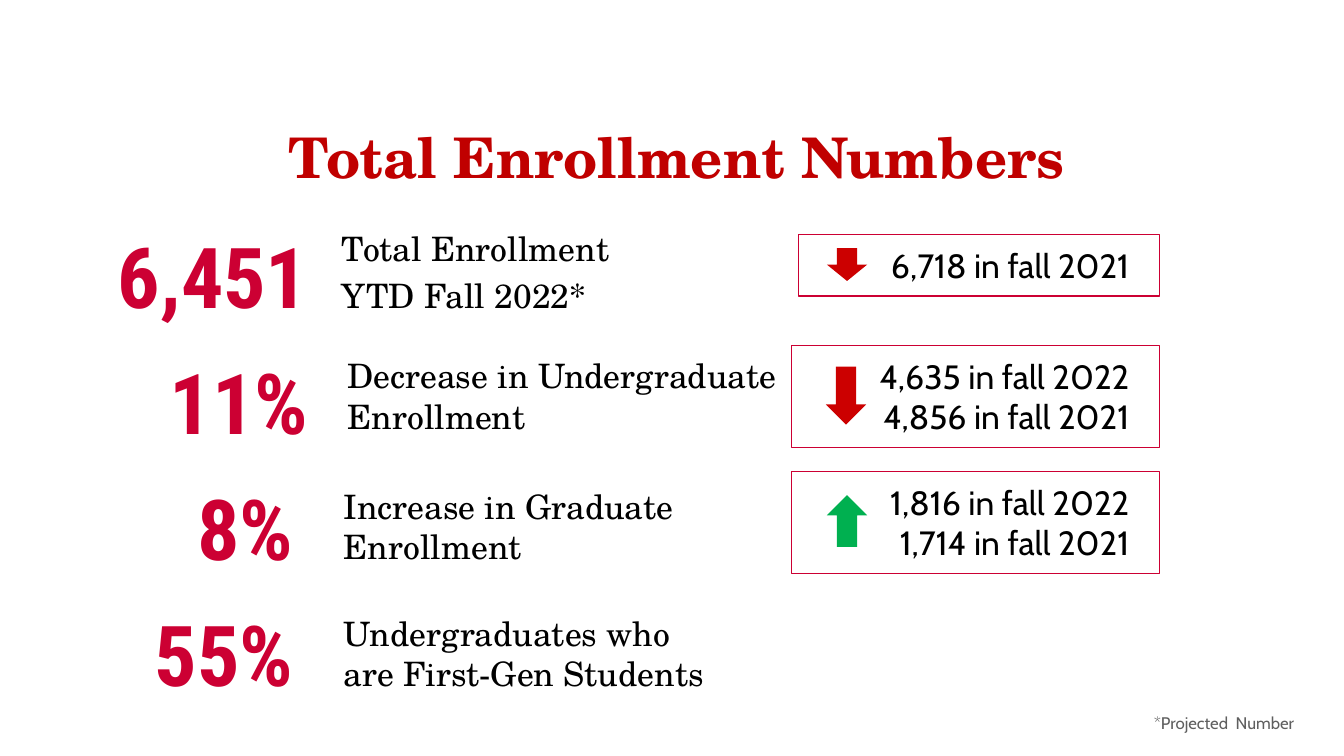
from pptx import Presentation
from pptx.dml.color import RGBColor
from pptx.enum.shapes import MSO_SHAPE as SHAPE
from pptx.enum.text import MSO_ANCHOR as ANCHOR, PP_ALIGN as ALIGN
from pptx.util import Inches, Pt

W, H = Inches(13.33), Inches(7.5)
COL, ROW = W / 40, H / 6
FIRST_ROW = 1.74
SERIF, SANS, CONDENSED = "TeX Gyre Schola", "Cabin", "Roboto Condensed"
CRIMSON, RED, GREEN = "CC0033", "CC0000", "00B050"
WIDE, TIGHT, CARD = (0.1, 0.05), (0.06, 0.03), (0.3, 0.1)

STATS = [
    ("6,451", (2.25, 7.23), "Total Enrollment\nYTD Fall 2022*",
     (9.87, 0.03, 11.22), WIDE),
    ("11%", (3.75, 5.73), "Decrease in Undergraduate Enrollment",
     (10.05, 0.04, 13.83), WIDE),
    ("8%", (3.75, 5.28), "Increase in Graduate Enrollment",
     (10.05, 0.09, 11.01), TIGHT),
    ("55%", (1.5, 7.53), "Undergraduates who are First-Gen Students",
     (10.05, 0.1, 11.7), TIGHT),
]
COMPARISONS = [
    ("6,718 in fall 2021", (23.77, 1.86, 10.74, 0.49),
     (24.61, 1.97, 1.2, 0.26), RED, 180),
    ("4,635 in fall 2022\n4,856 in fall 2021", (23.56, 2.74, 10.95, 0.81),
     (24.58, 2.91, 1.2, 0.46), RED, 180),
    ("1,816 in fall 2022\n1,714 in fall 2021", (23.56, 3.74, 10.95, 0.81),
     (24.61, 3.93, 1.2, 0.41), GREEN, 0),
]


def rgb(color):
    return RGBColor.from_string(color)


def place(x, y, w, h):
    return round(x * COL), round(y * ROW), round(w * COL), round(h * ROW)


def write(sp, text, font, size, color="000000", bold=False, align=ALIGN.LEFT,
          inset=WIDE, anchor=ANCHOR.TOP, gap=0):
    tf = sp.text_frame
    tf.word_wrap = True
    tf.vertical_anchor = anchor
    tf.margin_left = tf.margin_right = Inches(inset[0])
    tf.margin_top = tf.margin_bottom = Inches(inset[1])
    tf.text = text
    for i, p in enumerate(tf.paragraphs):
        p.alignment = align
        p.space_before = Pt(gap if i else 0)
        for r in p.runs:
            r.font.name, r.font.size, r.font.bold = font, Pt(size), bold
            r.font.color.rgb = rgb(color)


def add_text(s, box, text, font, size, **style):
    write(s.shapes.add_textbox(*place(*box)), text, font, size, **style)


def add_card(s, box, text):
    sp = s.shapes.add_shape(SHAPE.RECTANGLE, *place(*box))
    sp.shadow.inherit = False
    sp.fill.background()
    sp.line.color.rgb = rgb(CRIMSON)
    sp.line.width = Pt(1)
    write(sp, text, SANS, 24, align=ALIGN.RIGHT, inset=CARD,
          anchor=ANCHOR.MIDDLE)


def add_arrow(s, box, color, rotation):
    sp = s.shapes.add_shape(SHAPE.UP_ARROW, *place(*box))
    sp.shadow.inherit = False
    sp.fill.solid()
    sp.fill.fore_color.rgb = rgb(color)
    sp.line.fill.background()
    sp.rotation = rotation


def main():
    prs = Presentation()
    prs.slide_width, prs.slide_height = W, H
    s = prs.slides.add_slide(prs.slide_layouts[6])
    add_text(s, (1, 0.83, 38.26, 0.82), "Total Enrollment Numbers", SERIF, 40,
             color="C00000", bold=True, align=ALIGN.CENTER,
             anchor=ANCHOR.MIDDLE)
    for i, (number, (left, width), label, (x, dy, w), inset) in enumerate(STATS):
        top = FIRST_ROW + i
        add_text(s, (left, top, width, 0.89), number, CONDENSED, 60,
                 color=CRIMSON, bold=True, align=ALIGN.RIGHT)
        add_text(s, (x, top + dy, w, 0.73), label, SERIF, 24,
                 inset=inset, gap=5)
    for text, card, arrow, color, rotation in COMPARISONS:
        add_card(s, card, text)
        add_arrow(s, arrow, color, rotation)
    add_text(s, (27, 5.63, 11.7, 0.18), "*Projected  Number", SANS, 12,
             color="5F5F5F", align=ALIGN.RIGHT, inset=TIGHT)
    prs.save("out.pptx")


if __name__ == "__main__":
    main()
